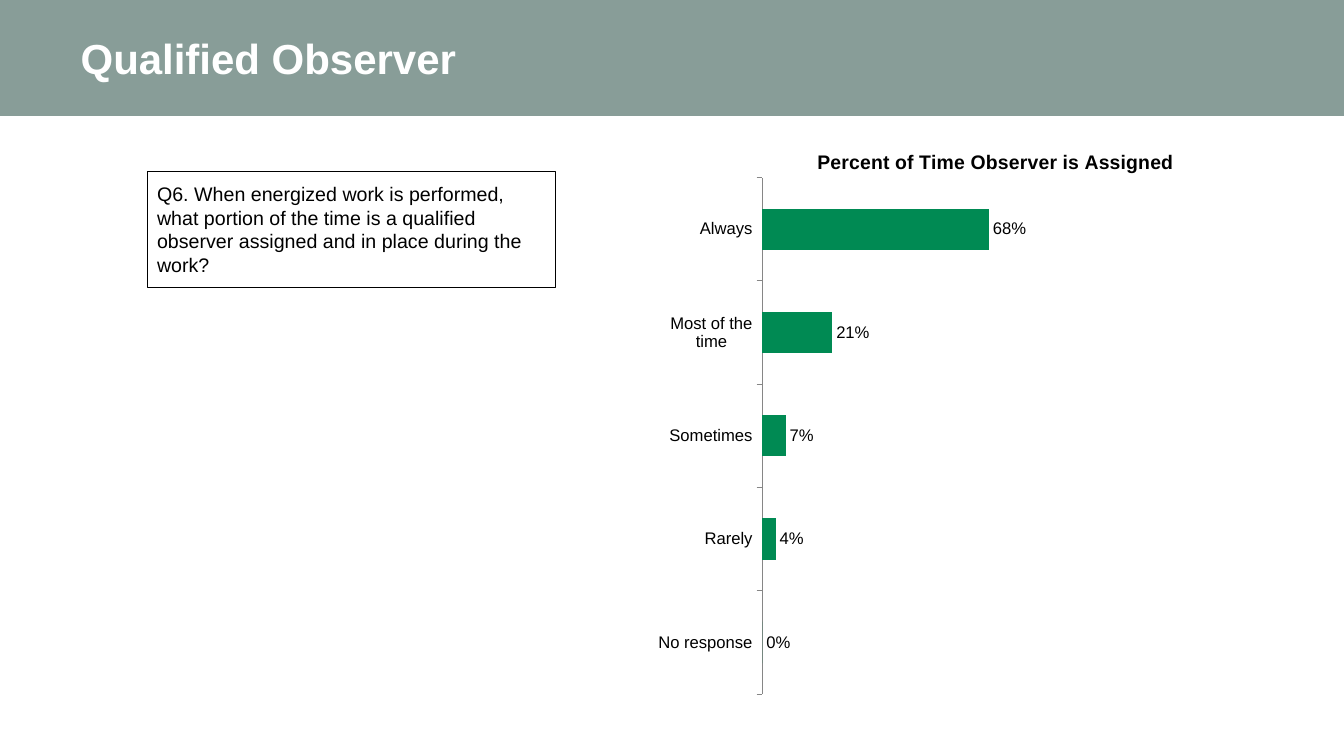
from dataclasses import dataclass

from pptx import Presentation
from pptx.chart.data import CategoryChartData
from pptx.dml.color import RGBColor as RGB
from pptx.enum.chart import XL_CHART_TYPE as CHART, XL_LABEL_POSITION as LABEL, XL_TICK_LABEL_POSITION as TICKS, XL_TICK_MARK as MARK
from pptx.enum.shapes import MSO_SHAPE as SHAPE
from pptx.enum.text import MSO_ANCHOR as ANCHOR, MSO_AUTO_SIZE as FIT, PP_ALIGN as ALIGN
from pptx.oxml import parse_xml
from pptx.oxml.ns import nsdecls, qn
from pptx.util import Pt


@dataclass(frozen=True)
class Theme:
    band: RGB = RGB(0x88, 0x9D, 0x98)
    bar: RGB = RGB(0x00, 0x8A, 0x53)
    axis: RGB = RGB(0x86, 0x86, 0x86)
    white: RGB = RGB(0xFF, 0xFF, 0xFF)
    black: RGB = RGB(0x00, 0x00, 0x00)
    font: str = "Arial"
    title: int = 30
    body: int = 14
    label: int = 12


class Deck:
    """Draws styled elements on the current slide."""

    def __init__(self, theme):
        self.theme = theme
        self.prs = Presentation()
        self.prs.slide_width, self.prs.slide_height = Pt(960), Pt(540)
        self.slide = self.prs.slides.add_slide(self.prs.slide_layouts[5])

    def style(self, font, size, color, bold=False):
        font.name, font.size, font.bold = self.theme.font, Pt(size), bold
        font.color.rgb = color

    def run(self, p, text, size, color, bold=False):
        r = p.add_run()
        r.text = text
        self.style(r.font, size, color, bold)

    def box(self, x, y, w, h, fill, line=None):
        sp = self.slide.shapes.add_shape(SHAPE.RECTANGLE, Pt(x), Pt(y), Pt(w), Pt(h))
        sp.shadow.inherit = False
        sp.fill.solid()
        sp.fill.fore_color.rgb = fill
        if line is None:
            sp.line.fill.background()
        else:
            sp.line.color.rgb, sp.line.width = line, Pt(0.75)
        return sp

    def title(self, text, x, y, w, h):
        band = self.box(0, 0, 960, h, self.theme.band)
        sp = self.slide.shapes.title
        band._element.addnext(sp._element)
        sp.left, sp.top, sp.width, sp.height = Pt(x), Pt(y), Pt(w), Pt(h)
        tf = sp.text_frame
        tf.auto_size, tf.vertical_anchor = FIT.NONE, ANCHOR.MIDDLE
        tf.margin_bottom = 0
        p = tf.paragraphs[0]
        p.alignment, p.line_spacing = ALIGN.LEFT, 0.9
        self.run(p, text, self.theme.title, self.theme.white, True)

    def question(self, text, x, y, w, h):
        tf = self.box(x, y, w, h, self.theme.white, self.theme.black).text_frame
        tf.word_wrap, tf.vertical_anchor = True, ANCHOR.MIDDLE
        p = tf.paragraphs[0]
        p.alignment = ALIGN.LEFT
        self.run(p, text, self.theme.body, self.theme.black)

    def place(self, parent, index, target="", **fractions):
        for old in parent.findall(qn("c:layout")):
            parent.remove(old)
        modes = "".join(f'<c:{k}Mode val="edge"/>' for k in "xy")
        values = "".join(f'<c:{k} val="{v}"/>' for k, v in fractions.items())
        parent.insert(index, parse_xml(
            f'<c:layout {nsdecls("c")}><c:manualLayout>{target}{modes}{values}'
            '</c:manualLayout></c:layout>'))

    def bar_chart(self, title, values, x, y, w, h):
        t = self.theme
        data = CategoryChartData(number_format="0%")
        data.categories = list(values)
        data.add_series("Series 1", list(values.values()))
        chart = self.slide.shapes.add_chart(
            CHART.BAR_CLUSTERED, Pt(x), Pt(y), Pt(w), Pt(h), data).chart
        self.style(chart.font, t.label, t.black)
        chart.has_legend = False

        chart.has_title = True
        heading = chart.chart_title
        self.run(heading.text_frame.paragraphs[0], title, t.body, t.black, True)
        el = heading._element
        self.place(el, 1, x=0.3, y=0.01)
        el.find(qn("c:overlay")).set("val", "1")
        self.place(chart._chartSpace.chart.plotArea, 0,
                   '<c:layoutTarget val="inner"/>', x=0.2, y=0.065, w=0.649, h=0.896)

        cat, val = chart.category_axis, chart.value_axis
        cat.has_major_gridlines = val.has_major_gridlines = False
        cat.major_tick_mark, cat.minor_tick_mark = MARK.OUTSIDE, MARK.NONE
        cat.tick_label_position = TICKS.LOW
        cat.format.line.color.rgb, cat.format.line.width = t.axis, Pt(0.75)
        self.style(cat.tick_labels.font, t.label, t.black)
        val.minimum_scale, val.maximum_scale, val.major_unit = 0, 1, 0.1
        val.visible = False

        plot = chart.plots[0]
        plot.gap_width, plot.vary_by_categories = 150, False
        series = plot.series[0]
        series.format.fill.solid()
        series.format.fill.fore_color.rgb = t.bar
        labels = series.data_labels
        labels.show_value, labels.position = True, LABEL.OUTSIDE_END
        labels.number_format, labels.number_format_is_linked = "0%", False
        self.style(labels.font, t.label, t.black)


def main():
    deck = Deck(Theme())
    deck.title("Qualified Observer", 50.4, 0, 864, 82.8)
    deck.bar_chart(
        "Percent of Time Observer is Assigned",
        {"No response": 0, "Rarely": 0.04, "Sometimes": 0.07,
         "Most of the time": 0.21, "Always": 0.68},
        470.2, 100.1, 370.8, 411.8)
    deck.question(
        "Q6. When energized work is performed, what portion of the time is a "
        "qualified observer assigned and in place during the work?",
        105.1, 122.4, 291.6, 82.8)
    deck.prs.save("out.pptx")


if __name__ == "__main__":
    main()
